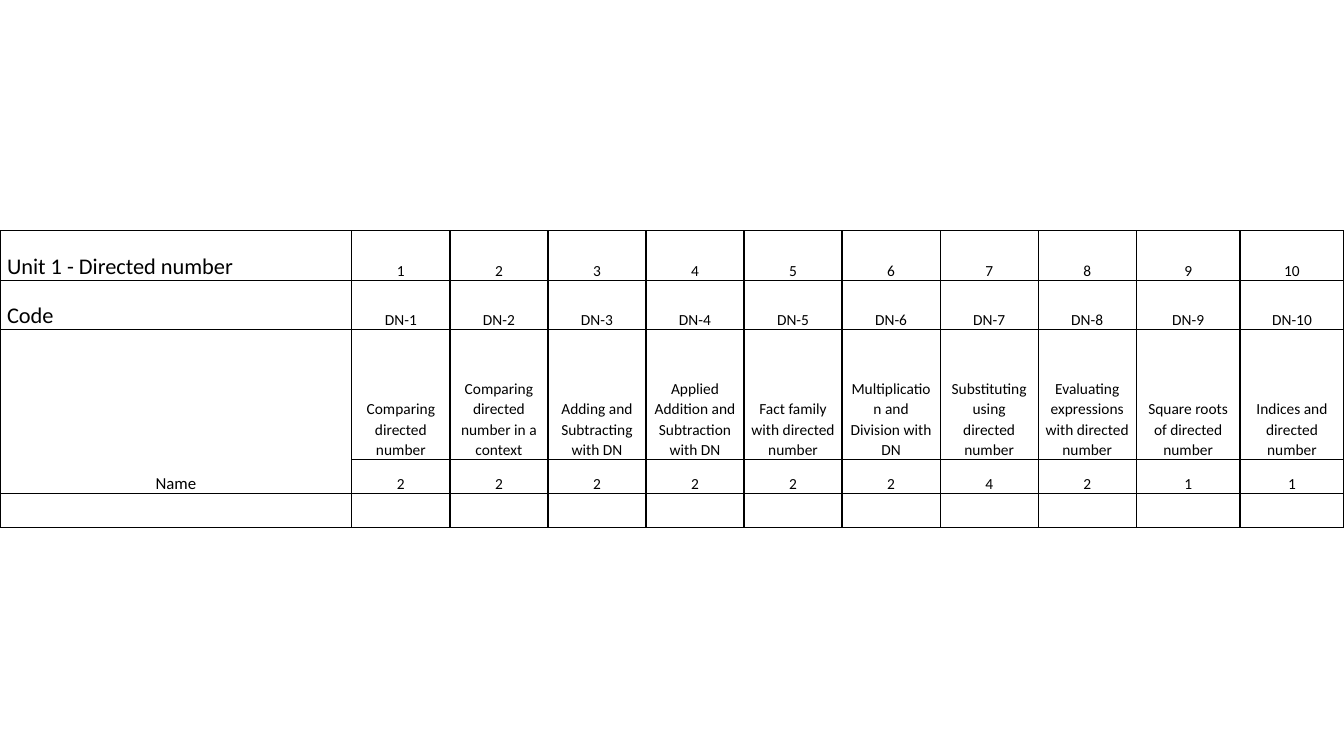
from dataclasses import dataclass

from lxml.etree import SubElement
from pptx import Presentation
from pptx.dml.color import RGBColor
from pptx.enum.text import MSO_ANCHOR, PP_ALIGN
from pptx.oxml.ns import qn
from pptx.table import Table, _Cell
from pptx.util import Inches, Pt


@dataclass(frozen=True)
class Theme:
    font: str = "Calibri"
    ink: str = "000000"
    heading: int = 16
    label: int = 12
    body: int = 11
    line_spacing: float = 1.07
    border: int = 1
    side_margin: float = 0.07


@dataclass(frozen=True)
class Topic:
    name: str
    marks: int


THEME = Theme()
PAGE_WIDTH, PAGE_HEIGHT = 13.33, 7.5

TOPICS = [
    Topic("Comparing directed number", 2),
    Topic("Comparing directed number in a context", 2),
    Topic("Adding and Subtracting with DN", 2),
    Topic("Applied Addition and Subtraction with DN", 2),
    Topic("Fact family with directed number", 2),
    Topic("Multiplication and Division with DN", 2),
    Topic("Substituting using directed number", 4),
    Topic("Evaluating expressions with directed number", 2),
    Topic("Square roots of directed number", 1),
    Topic("Indices and directed number", 1),
]

# Grid: a wide label column, eight equal columns and two slightly wider ones
LABEL_COLUMN, WIDE_COLUMN, WIDE_COUNT = 3.49, 1.03, 2
NARROW_COUNT = len(TOPICS) - WIDE_COUNT
NARROW_COLUMN = (PAGE_WIDTH - LABEL_COLUMN - WIDE_COUNT * WIDE_COLUMN) / NARROW_COUNT
COLUMNS = [LABEL_COLUMN] + [NARROW_COLUMN] * NARROW_COUNT + [WIDE_COLUMN] * WIDE_COUNT
ROWS = [0.49, 0.49, 1.29, 0.34, 0.33]
TABLE_TOP = 2.29


def style_cell(cell: _Cell) -> None:
    """Give a cell thin borders, no fill and tight margins."""
    properties = cell._tc.get_or_add_tcPr()
    for side in ("a:lnL", "a:lnR", "a:lnT", "a:lnB"):
        line = SubElement(properties, qn(side), w=str(Pt(THEME.border)))
        fill = SubElement(line, qn("a:solidFill"))
        SubElement(fill, qn("a:srgbClr"), val=THEME.ink)
    cell.fill.background()
    cell.margin_left = cell.margin_right = Inches(THEME.side_margin)
    cell.margin_top = cell.margin_bottom = 0
    cell.vertical_anchor = MSO_ANCHOR.BOTTOM


def write(cell: _Cell, text: str, *, size: int = THEME.body,
          align: PP_ALIGN = PP_ALIGN.CENTER) -> None:
    """Put formatted text into a cell."""
    para = cell.text_frame.paragraphs[0]
    para.alignment = align
    para.line_spacing = THEME.line_spacing
    span = para.add_run()
    span.text = text
    span.font.name = THEME.font
    span.font.size = Pt(size)
    span.font.color.rgb = RGBColor.from_string(THEME.ink)


def fill_table(table: Table) -> None:
    # Row labels; the name label spans the topic and marks rows
    write(table.cell(0, 0), "Unit 1 - Directed number", size=THEME.heading, align=PP_ALIGN.LEFT)
    write(table.cell(1, 0), "Code", size=THEME.heading, align=PP_ALIGN.LEFT)
    table.cell(2, 0).merge(table.cell(3, 0))
    write(table.cell(2, 0), "Name", size=THEME.label)

    # One column per topic
    for number, topic in enumerate(TOPICS, start=1):
        entries = (str(number), f"DN-{number}", topic.name, str(topic.marks))
        for row, text in enumerate(entries):
            write(table.cell(row, number), text)


def main() -> None:
    deck = Presentation()
    deck.slide_width, deck.slide_height = Inches(PAGE_WIDTH), Inches(PAGE_HEIGHT)
    page = deck.slides.add_slide(deck.slide_layouts[6])

    # Table frame without the banded look
    table = page.shapes.add_table(
        len(ROWS), len(COLUMNS), 0, Inches(TABLE_TOP),
        Inches(PAGE_WIDTH), Inches(sum(ROWS))).table
    table.first_row = table.horz_banding = False
    for column, width in zip(table.columns, COLUMNS):
        column.width = Inches(width)
    for row, height in zip(table.rows, ROWS):
        row.height = Inches(height)
    for cell in table.iter_cells():
        style_cell(cell)

    fill_table(table)
    deck.save("out.pptx")


if __name__ == "__main__":
    main()
